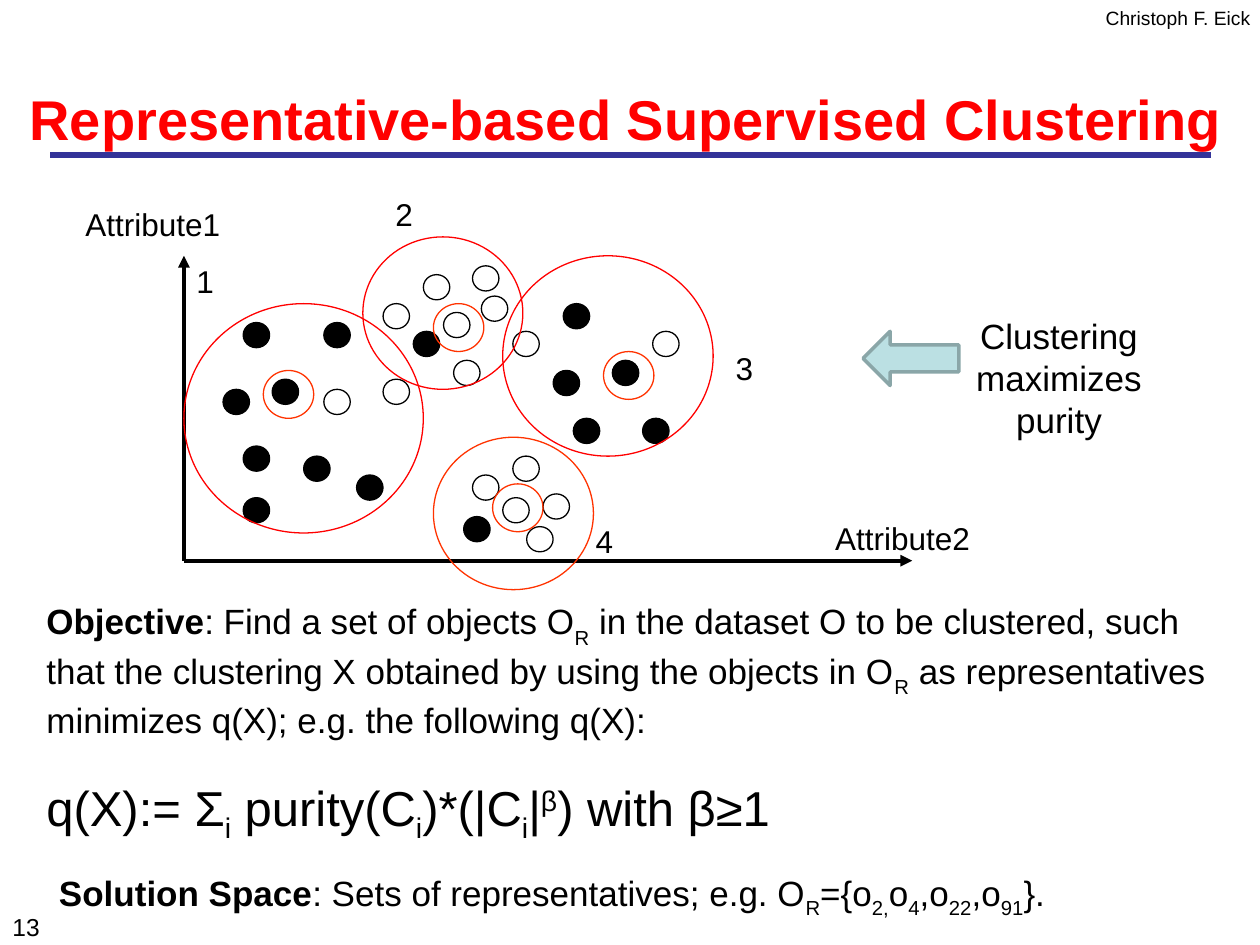
from dataclasses import dataclass
from typing import NamedTuple, Optional

from lxml import etree
from pptx import Presentation
from pptx.dml.color import RGBColor
from pptx.enum.shapes import MSO_CONNECTOR, MSO_SHAPE
from pptx.enum.text import MSO_ANCHOR, MSO_AUTO_SIZE, PP_ALIGN
from pptx.oxml.ns import qn
from pptx.util import Inches, Pt

OVAL = MSO_SHAPE.OVAL
ARROW = MSO_SHAPE.LEFT_ARROW
STRAIGHT = MSO_CONNECTOR.STRAIGHT
LEFT = PP_ALIGN.LEFT
CENTER = PP_ALIGN.CENTER
TOP = MSO_ANCHOR.TOP
MIDDLE = MSO_ANCHOR.MIDDLE
NO_FIT = MSO_AUTO_SIZE.NONE


@dataclass(frozen=True)
class Theme:
    font: str = "Arial"
    black: str = "000000"
    white: str = "FFFFFF"
    red: str = "FF0000"
    orange: str = "FF3300"
    rule: str = "333399"
    teal: str = "BBE0E3"
    edge: str = "8AA6A8"
    title: int = 32
    formula: int = 28
    body: int = 20
    label: int = 18
    number: int = 14
    author: int = 11


class Run(NamedTuple):
    text: str
    base: int = 0
    bold: bool = False


class Box(NamedTuple):
    left: float
    top: float
    width: float
    height: float


class Ring(NamedTuple):
    box: Box
    color: str


class Label(NamedTuple):
    text: str
    box: Box


THEME = Theme()
DOT = (0.21, 0.2)
CORE = (0.4, 0.38)

SOLID = [
    (1.93, 2.56), (2.16, 3.01), (1.93, 3.54), (2.57, 2.56), (2.41, 3.62),
    (4.55, 3.32), (4.86, 2.86), (4.39, 2.94), (5.1, 3.32), (4.47, 2.41),
    (3.28, 2.63), (2.83, 3.77), (1.93, 3.95), (1.77, 3.09), (3.68, 4.1),
]
HOLLOW = [
    (3.04, 3.01), (2.57, 3.09), (4.07, 2.63), (4.07, 3.62), (5.18, 2.63),
    (3.36, 2.18), (3.52, 2.48), (3.75, 2.11), (3.6, 2.86), (3.75, 3.77),
    (3.82, 2.35), (4.31, 3.92), (3.04, 2.41), (4.18, 4.18),
]
WHITE_DOT = (3.99, 3.95)
CORES = [(3.91, 3.84), (2.09, 2.94), (3.44, 2.41), (4.79, 2.79)]
RINGS = [
    Ring(Box(3.99, 2.03, 1.67, 1.59), THEME.red),
    Ring(Box(1.46, 2.41, 1.9, 1.82), THEME.red),
    Ring(Box(2.88, 1.88, 1.27, 1.21), THEME.red),
    Ring(Box(3.44, 3.47, 1.27, 1.21), THEME.orange),
] + [Ring(Box(*spot, *CORE), THEME.orange) for spot in CORES]
LABELS = [
    Label("Attribute2", Box(6.53, 4.07, 1.35, 0.36)),
    Label("Attribute1", Box(0.58, 1.58, 1.35, 0.36)),
    Label("1", Box(1.46, 2.03, 1.27, 0.36)),
    Label("2", Box(3.04, 1.5, 1.27, 0.36)),
    Label("3", Box(5.74, 2.72, 1.27, 0.36)),
    Label("4", Box(4.63, 4.09, 1.27, 0.36)),
]
GOAL = [
    Run("Objective", bold=True), Run(": Find a set of objects O"), Run("R", -30),
    Run(" in the dataset O to be clustered, such that the clustering X "
        "obtained by using the objects in O"),
    Run("R", -30),
    Run(" as representatives minimizes q(X); e.g. the following q(X):"),
]
FORMULA = [
    Run("q(X):= Σ"), Run("i", -25), Run(" purity(C"), Run("i", -25),
    Run(")*(|C"), Run("i", -25), Run("|"), Run("β", 30), Run(") with β≥1"),
]
SPACE = [
    Run("Solution Space", bold=True), Run(": Sets of representatives; e.g. O"),
    Run("R", -25), Run("={o"), Run("2,", -25), Run("o"), Run("4", -25),
    Run(",o"), Run("22", -25), Run(",o"), Run("91", -25), Run("}."),
]


def place(shape, box: Box) -> None:
    shape.left, shape.top, shape.width, shape.height = map(Inches, box)


def write(frame, runs: list[Run], *, size: int, color: str = THEME.black,
          align=LEFT, anchor=TOP, wrap: bool = True, gap: float = 0,
          more: bool = False) -> None:
    frame.word_wrap = wrap
    frame.auto_size = NO_FIT
    frame.vertical_anchor = anchor
    para = frame.add_paragraph() if more else frame.paragraphs[0]
    para.alignment = align
    if more:
        para.space_before = Pt(gap)
    for part in runs:
        run = para.add_run()
        run.text = part.text
        run.font.name = THEME.font
        run.font.size = Pt(size)
        run.font.bold = part.bold
        run.font.color.rgb = RGBColor.from_string(color)
        if part.base:
            run._r.get_or_add_rPr().set("baseline", str(part.base * 1000))


def add_text(slide, box: Box, runs: list[Run], **style):
    frame = slide.shapes.add_textbox(*map(Inches, box)).text_frame
    write(frame, runs, **style)
    return frame


def add_form(slide, kind, box: Box, line: str, fill: Optional[str] = None,
             width: float = 0.75) -> None:
    shape = slide.shapes.add_shape(kind, *map(Inches, box))
    shape.shadow.inherit = False
    shape.line.color.rgb = RGBColor.from_string(line)
    shape.line.width = Pt(width)
    if fill:
        shape.fill.solid()
        shape.fill.fore_color.rgb = RGBColor.from_string(fill)
    else:
        shape.fill.background()


def add_line(slide, start: tuple, end: tuple, color: str, width: float,
             head: bool = False) -> None:
    line = slide.shapes.add_connector(STRAIGHT, *map(Inches, start + end))
    line.line.color.rgb = RGBColor.from_string(color)
    line.line.width = Pt(width)
    if head:
        etree.SubElement(line.line._get_or_add_ln(), qn("a:tailEnd"), type="triangle")
    etree.SubElement(line._element.spPr, qn("a:effectLst"))


def main() -> None:
    deck = Presentation()
    deck.slide_width, deck.slide_height = Inches(10), Inches(7.5)
    slide = deck.slides.add_slide(deck.slide_layouts[5])

    add_line(slide, (0.4, 1.23), (9.61, 1.23), THEME.rule, 3)
    add_text(slide, Box(8.66, 0, 1.38, 0.29), [Run("Christoph F. Eick")],
             size=THEME.author, align=CENTER, wrap=False)
    title = slide.shapes.title
    place(title, Box(-0.04, 0.6, 10.02, 0.67))
    write(title.text_frame,
          [Run("Representative-based Supervised Clustering", bold=True)],
          size=THEME.title, color=THEME.red, align=CENTER, anchor=MIDDLE)

    for spot in SOLID:
        add_form(slide, OVAL, Box(*spot, *DOT), THEME.black, THEME.black)
    for spot in HOLLOW:
        add_form(slide, OVAL, Box(*spot, *DOT), THEME.black)
    add_form(slide, OVAL, Box(*WHITE_DOT, *DOT), THEME.black, THEME.white)
    for end in [(1.46, 2.03), (7.24, 4.45)]:
        add_line(slide, (1.46, 4.45), end, THEME.black, 2.25, head=True)
    for ring in RINGS:
        add_form(slide, OVAL, ring.box, ring.color)
    for label in LABELS:
        add_text(slide, label.box, [Run(label.text)], size=THEME.label)

    note = Box(7.64, 2.45, 1.53, 1.01)
    frame = add_text(slide, note, [Run("Clustering")], size=THEME.body,
                     align=CENTER, wrap=False)
    for word in ["maximizes", "purity"]:
        write(frame, [Run(word)], size=THEME.body, align=CENTER, wrap=False, more=True)
    add_form(slide, ARROW, Box(6.85, 2.63, 0.76, 0.43), THEME.edge, THEME.teal, 2)

    frame = add_text(slide, Box(0.27, 4.71, 9.67, 1.88), GOAL, size=THEME.body)
    write(frame, FORMULA, size=THEME.formula, gap=21, more=True)
    add_text(slide, Box(0.37, 6.87, 9.27, 0.44), SPACE, size=THEME.body)
    add_text(slide, Box(0, 7.19, 0.98, 0.31), [Run("13")], size=THEME.number)
    deck.save("out.pptx")


if __name__ == "__main__":
    main()
